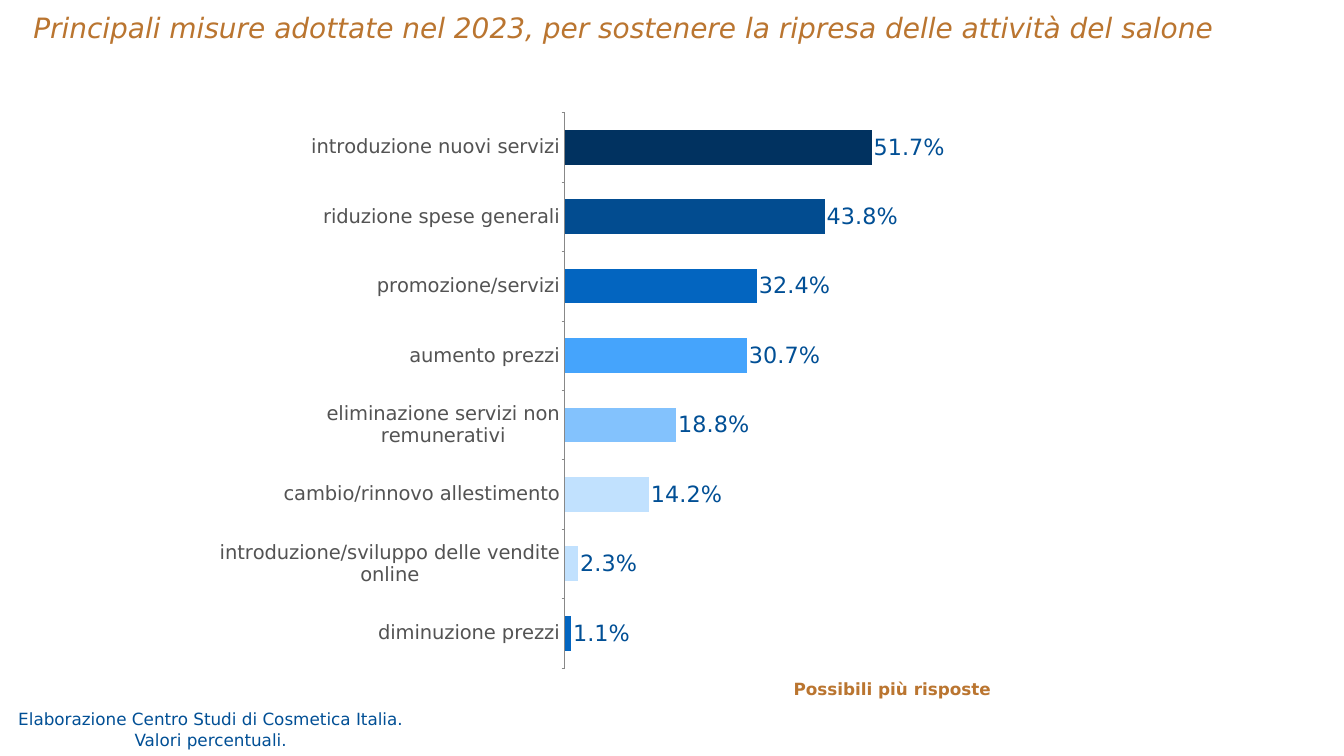
from lxml import etree
from pptx import Presentation
from pptx.chart.data import CategoryChartData
from pptx.dml.color import RGBColor
from pptx.enum.chart import XL_CHART_TYPE, XL_LABEL_POSITION, XL_TICK_MARK
from pptx.enum.text import MSO_ANCHOR, MSO_AUTO_SIZE, PP_ALIGN
from pptx.oxml.ns import qn
from pptx.util import Inches, Pt

BAR = XL_CHART_TYPE.BAR_CLUSTERED
OUT_END = XL_LABEL_POSITION.OUTSIDE_END
TICK_OUT = XL_TICK_MARK.OUTSIDE
NO_TICK = XL_TICK_MARK.NONE
MIDDLE = MSO_ANCHOR.MIDDLE
GROW = MSO_AUTO_SIZE.SHAPE_TO_FIT_TEXT
LEFT, CENTER = PP_ALIGN.LEFT, PP_ALIGN.CENTER

FONT = "DejaVu Sans"
BRONZE = RGBColor(0xBA, 0x75, 0x30)
BLUE = RGBColor(0x01, 0x4F, 0x95)
GREY = RGBColor(0x53, 0x53, 0x53)
RULE = RGBColor(0x88, 0x88, 0x88)
NAVY = RGBColor(0x01, 0x32, 0x60)
DEEP = RGBColor(0x02, 0x4C, 0x90)
MID = RGBColor(0x03, 0x65, 0xC0)
SKY = RGBColor(0x45, 0xA4, 0xFC)
LIGHT = RGBColor(0x83, 0xC2, 0xFD)
PALE = RGBColor(0xC1, 0xE1, 0xFE)

# Answer, share and bar colour
ANSWERS = [
    ("introduzione nuovi servizi", 0.517, NAVY),
    ("riduzione spese generali", 0.438, DEEP),
    ("promozione/servizi", 0.324, MID),
    ("aumento prezzi", 0.307, SKY),
    ("eliminazione servizi non remunerativi", 0.188, LIGHT),
    ("cambio/rinnovo allestimento", 0.142, PALE),
    ("introduzione/sviluppo delle vendite online", 0.023, PALE),
    ("diminuzione prezzi", 0.011, MID),
]


def style(font, size, color):
    font.name, font.size, font.color.rgb = FONT, Pt(size), color


def fill_text(shape, box, lines, size, color, align=CENTER, space=1.0):
    """Place a text shape and write one paragraph per line."""
    shape.left, shape.top, shape.width, shape.height = map(Inches, box)
    frame = shape.text_frame
    frame.text = "\n".join(lines)
    frame.word_wrap, frame.auto_size = True, GROW
    frame.vertical_anchor = MIDDLE
    frame.margin_left = frame.margin_right = Inches(0.06)
    frame.margin_top = frame.margin_bottom = Inches(0.06)
    for para in frame.paragraphs:
        para.alignment, para.line_spacing = align, space
        para.space_before = Pt(0)
        style(para.font, size, color)
    return frame


def add_note(slide, box, lines, color, space=1.0):
    shape = slide.shapes.add_textbox(0, 0, 0, 0)
    return fill_text(shape, box, lines, 24, color, space=space)


def set_plot(chart, x, y, w, h):
    """Fix the inner plot area as shares of the chart's size."""
    area = chart.plots[0]._element.getparent()
    for old in area.findall(qn("c:layout")):
        area.remove(old)
    layout = etree.Element(qn("c:layout"))
    area.insert(0, layout)
    manual = etree.SubElement(layout, qn("c:manualLayout"))
    parts = [("layoutTarget", "inner"), ("xMode", "edge"), ("yMode", "edge"),
             ("x", x), ("y", y), ("w", w), ("h", h)]
    for tag, val in parts:
        etree.SubElement(manual, qn("c:" + tag)).set("val", str(val))


def add_bars(slide, box):
    names, shares, colors = zip(*ANSWERS)
    data = CategoryChartData(number_format="0.0%")
    data.categories = names
    data.add_series("Series 1", shares)
    chart = slide.shapes.add_chart(BAR, *map(Inches, box), data).chart
    chart.has_legend = chart.has_title = False
    chart.font.name, chart.font.size = FONT, Pt(24)
    set_plot(chart, 0.443, 0.031, 0.463, 0.942)

    # Axes
    cats, vals = chart.category_axis, chart.value_axis
    cats.reverse_order = True
    cats.major_tick_mark, cats.minor_tick_mark = TICK_OUT, NO_TICK
    cats.format.line.color.rgb, cats.format.line.width = RULE, Pt(0.75)
    style(cats.tick_labels.font, 28, GREY)
    vals.visible = vals.has_major_gridlines = False
    vals.minimum_scale, vals.maximum_scale = 0, 0.6

    # Bars and their labels
    plot = chart.plots[0]
    plot.gap_width, plot.vary_by_categories = 100, False
    series = plot.series[0]
    series.invert_if_negative = False
    series.format.fill.solid()
    series.format.fill.fore_color.rgb = MID
    for i, color in enumerate(colors):
        fill = series.points[i].format.fill
        fill.solid()
        fill.fore_color.rgb = color
    labels = series.data_labels
    labels.show_value, labels.position = True, OUT_END
    labels.number_format, labels.number_format_is_linked = "0.0%", False
    style(labels.font, 32, BLUE)


def main():
    deck = Presentation()
    deck.slide_width, deck.slide_height = Inches(26.67), Inches(15)
    slide = deck.slides.add_slide(deck.slide_layouts[5])

    # Title
    title = fill_text(
        slide.shapes.title, (0.6, 0.07, 25.44, 0.83),
        ["Principali misure adottate nel 2023, per sostenere la ripresa "
         "delle attività del salone"],
        40, BRONZE, LEFT, 1.2)
    title.paragraphs[0].font.italic = True

    # Chart
    add_bars(slide, (4.36, 1.87, 15.35, 11.7))

    # Source and remark
    add_note(slide, (-0.03, 14.01, 8.42, 0.92),
             ["Elaborazione Centro Studi di Cosmetica Italia.",
              "Valori percentuali."], BLUE)
    remark = add_note(slide, (15.34, 13.36, 4.73, 0.55),
                      ["Possibili più risposte"], BRONZE, 1.2)
    remark.paragraphs[0].font.bold = True

    deck.save("out.pptx")


if __name__ == "__main__":
    main()
